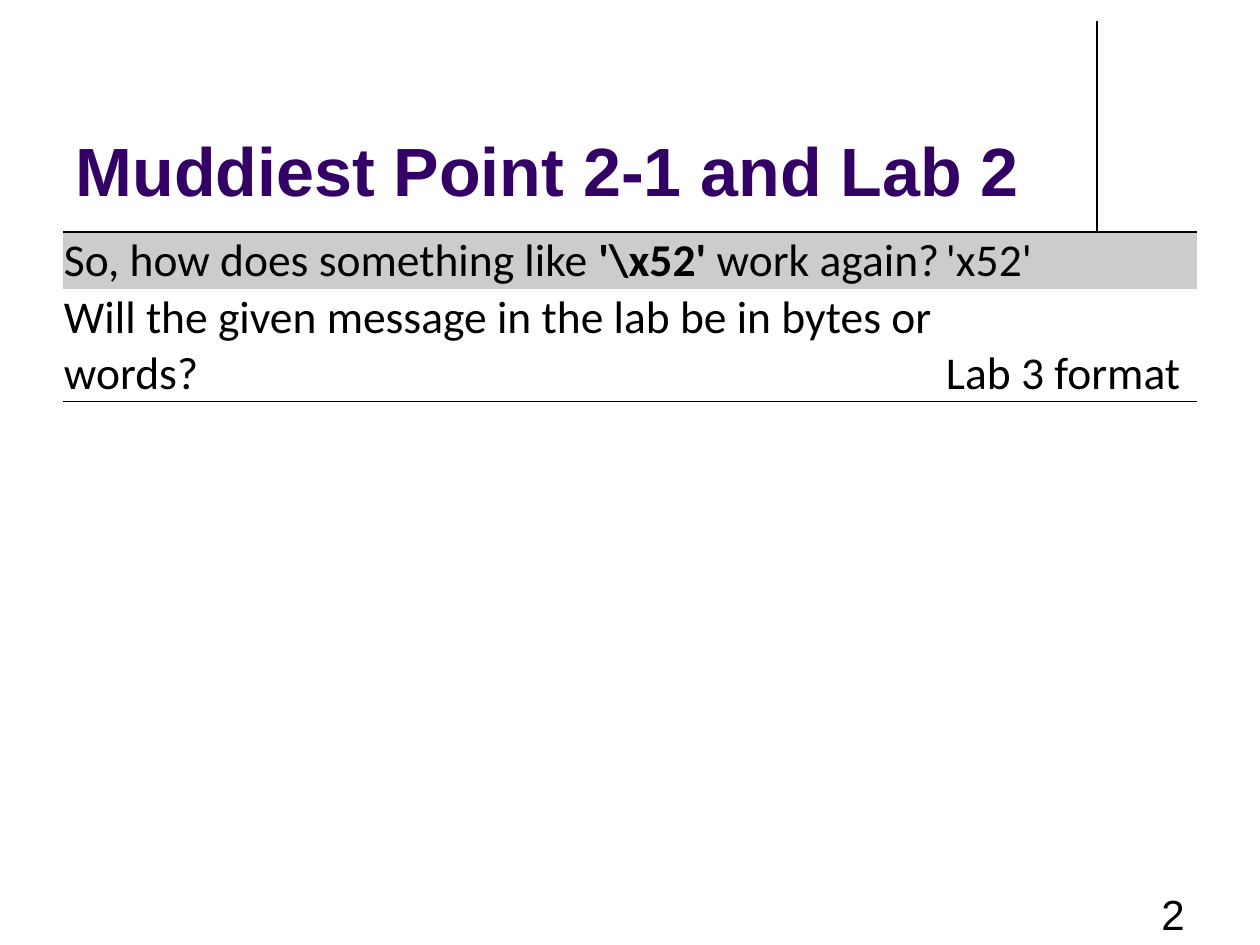
from lxml import etree
from pptx import Presentation
from pptx.dml.color import RGBColor
from pptx.enum.shapes import MSO_CONNECTOR
from pptx.enum.text import MSO_ANCHOR, PP_ALIGN
from pptx.oxml import parse_xml
from pptx.oxml.ns import nsdecls, qn
from pptx.util import Pt

LINE = MSO_CONNECTOR.STRAIGHT
TOP, LOW = MSO_ANCHOR.TOP, MSO_ANCHOR.BOTTOM
LEFT, RIGHT = PP_ALIGN.LEFT, PP_ALIGN.RIGHT

COLORS = {"title": "330066", "ink": "000000", "band": "CCCCCC"}
TITLE = "Muddiest Point 2-1 and Lab 2"
PAGE = "2"
ROWS = [
    [["So, how does something like ", r"'\x52'", " work again?"], ["'x52'"]],
    [["Will the given message in the lab be in bytes or words?"], ["Lab 3 format"]],
]
BOLD = {r"'\x52'"}
WIDTHS = [882, 252]
HEIGHTS = [57, 112]
EDGES = ["lnT", "lnB"]
PLAIN = "{2D5ABB26-0587-4C30-8999-92F81FD0307C}"


def px(n):
    return round(n * 914400 / 126)


def color(name):
    return RGBColor.from_string(COLORS[name])


def style(run, face, size, tint, bold=False):
    font = run.font
    font.name, font.size, font.bold = face, Pt(size), bold
    font.color.rgb = color(tint)


def place(shape, *box):
    shape.left, shape.top, shape.width, shape.height = map(px, box)


def border(cell, edge):
    cell._tc.get_or_add_tcPr().insert(0, parse_xml(
        f'<a:{edge} {nsdecls("a")} w="12700"><a:solidFill>'
        f'<a:srgbClr val="{COLORS["ink"]}"/></a:solidFill></a:{edge}>'))


def fill_cell(cell, parts, row):
    cell.margin_left = cell.margin_right = cell.margin_top = px(1)
    cell.margin_bottom = 0
    cell.vertical_anchor = LOW
    for part in parts:
        run = cell.text_frame.paragraphs[0].add_run()
        run.text = part
        style(run, "Calibri", 26, "ink", part in BOLD)
    if row == 0:
        cell.fill.solid()
        cell.fill.fore_color.rgb = color("band")
    else:
        cell.fill.background()
    border(cell, EDGES[row])


def add_grid(slide):
    frame = slide.shapes.add_table(len(ROWS), len(WIDTHS), px(63), px(232),
                                   px(sum(WIDTHS)), px(sum(HEIGHTS)))
    table = frame.table
    table.first_row = table.horz_banding = False
    table._tbl.tblPr.find(qn("a:tableStyleId")).text = PLAIN
    for col, width in zip(table.columns, WIDTHS):
        col.width = px(width)
    for i, (row, height) in enumerate(zip(ROWS, HEIGHTS)):
        table.rows[i].height = px(height)
        for j, parts in enumerate(row):
            fill_cell(table.cell(i, j), parts, i)


def add_rule(slide):
    rule = slide.shapes.add_connector(LINE, px(1097), px(21), px(1097), px(231))
    rule.line.color.rgb = color("ink")
    rule.line.width = Pt(0.75)
    etree.SubElement(rule._element.spPr, qn("a:effectLst"))


def set_text(shape, text, anchor, align, *look):
    frame = shape.text_frame
    frame.text = text
    frame.word_wrap = True
    frame.vertical_anchor = anchor
    para = frame.paragraphs[0]
    para.alignment = align
    style(para.runs[0], *look)


def main():
    deck = Presentation()
    deck.slide_width, deck.slide_height = px(1260), px(945)
    slide = deck.slides.add_slide(deck.slide_layouts[5])
    add_rule(slide)
    title = slide.shapes.title
    place(title, 63, 38, 1040, 179)
    set_text(title, TITLE, LOW, LEFT, "Arial", 39, "title", True)
    add_grid(slide)
    page = slide.shapes.add_textbox(px(903), px(882), px(294), px(63))
    set_text(page, PAGE, TOP, RIGHT, "Arial", 24, "ink")
    deck.save("out.pptx")


if __name__ == "__main__":
    main()
